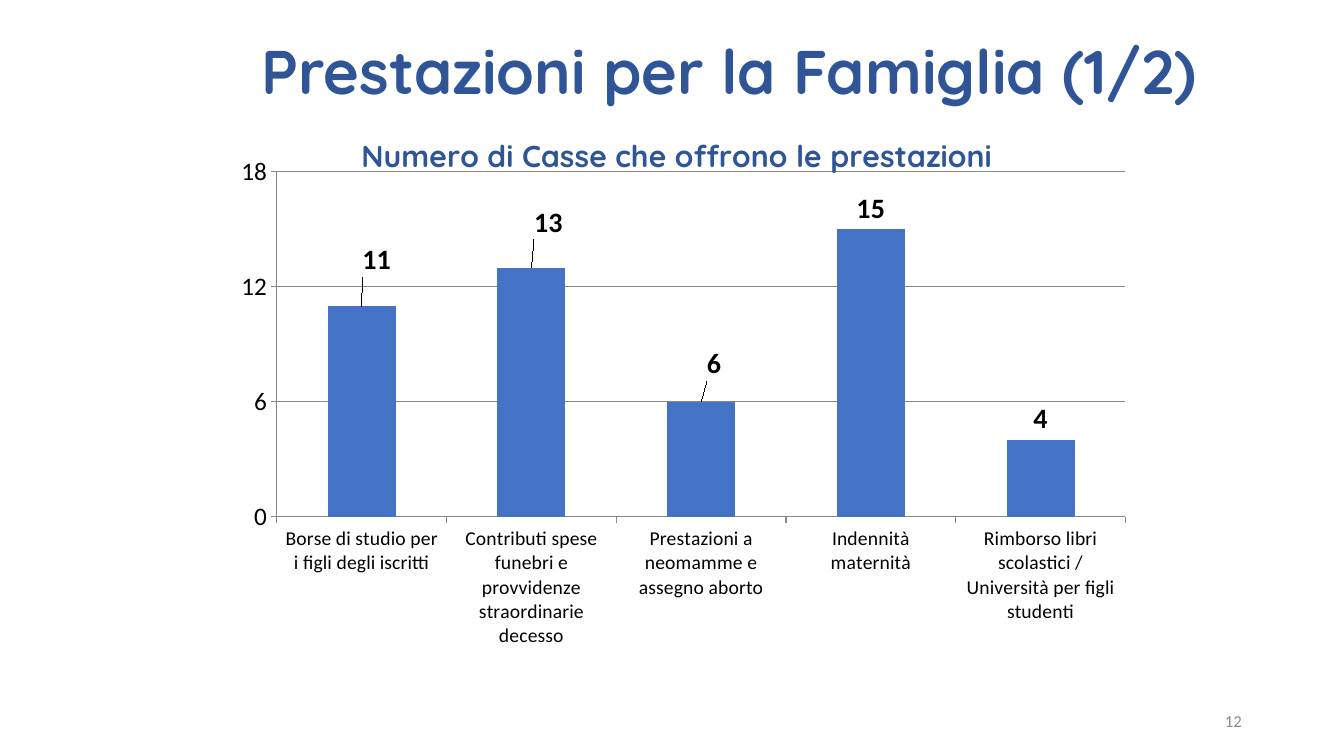
from lxml.etree import SubElement
from pptx import Presentation
from pptx.chart.data import CategoryChartData
from pptx.dml.color import RGBColor
from pptx.enum.chart import XL_CHART_TYPE, XL_LABEL_POSITION, XL_TICK_MARK
from pptx.enum.text import MSO_ANCHOR, MSO_AUTO_SIZE, PP_ALIGN
from pptx.oxml.ns import qn
from pptx.util import Emu, Pt

# Content
TITLE = "Prestazioni per la Famiglia (1/2)"
CHART_TITLE = "Numero di Casse che offrono le prestazioni"
PAGE_NUMBER = "12"
BENEFITS = [
    ("Borse di studio per i figli degli iscritti", 11),
    ("Contributi spese funebri e provvidenze straordinarie decesso", 13),
    ("Prestazioni a neomamme e assegno aborto", 6),
    ("Indennità maternità", 15),
    ("Rimborso libri scolastici / Università per figli studenti", 4),
]

# Geometry in px: left, top, width, height
SLIDE_SIZE = (1344, 756)
TITLE_BOX = (251, 36, 1159, 146)
CHART_BOX = (219, 100, 907, 576)
PLOT_BOX = (58, 72, 849, 345)  # inside the chart
CHART_TITLE_AT = (137, 28)
LABEL_SHIFTS = {0: (15, -25), 1: (17, -24), 2: (13, -17)}

BLUE, BAR, BLACK, GRID, GREY = "2F5597", "4472C4", "000000", "868686", "8C8C8C"
HEADING_FONT, BODY_FONT = "Quicksand", "Calibri"


def px(length):
    return Emu(round(length * 914400 / 100.8))


def style_font(font, name, size, color, bold=False):
    font.name, font.size, font.bold = name, Pt(size), bold
    font.color.rgb = RGBColor.from_string(color)


def write(text_frame, text, align, anchor, *style):
    text_frame.word_wrap = True
    text_frame.auto_size = MSO_AUTO_SIZE.NONE
    text_frame.vertical_anchor = anchor
    paragraph = text_frame.paragraphs[0]
    paragraph.alignment = align
    run = paragraph.add_run()
    run.text = text
    style_font(run.font, *style)
    return paragraph


def set_layout(parent, index, box, inner=False):
    """Place a chart part by fractions of the chart's size."""
    for old in parent.findall(qn("c:layout")):
        parent.remove(old)
    layout = SubElement(parent, qn("c:layout"))
    parent.insert(index, layout)
    manual = SubElement(layout, qn("c:manualLayout"))
    settings = [("layoutTarget", "inner")] if inner else []
    if len(box) == 4 or box == CHART_TITLE_AT:
        settings += [("xMode", "edge"), ("yMode", "edge")]
    for position, (tag, length) in enumerate(zip("xywh", box)):
        settings.append((tag, f"{length / CHART_BOX[2 + position % 2]:.4f}"))
    for tag, value in settings:
        SubElement(manual, qn(f"c:{tag}")).set("val", value)


presentation = Presentation()
presentation.slide_width, presentation.slide_height = map(px, SLIDE_SIZE)
slide = presentation.slides.add_slide(presentation.slide_layouts[5])

# Title
title = slide.shapes.title
title.left, title.top, title.width, title.height = map(px, TITLE_BOX)
paragraph = write(title.text_frame, TITLE, PP_ALIGN.LEFT, MSO_ANCHOR.TOP,
                  HEADING_FONT, 44, BLUE, True)
paragraph.line_spacing = 0.9

# Chart
data = CategoryChartData()
data.categories = [name for name, _ in BENEFITS]
data.add_series(CHART_TITLE, [count for _, count in BENEFITS])
chart = slide.shapes.add_chart(
    XL_CHART_TYPE.COLUMN_CLUSTERED, *map(px, CHART_BOX), data).chart
style_font(chart.font, BODY_FONT, 18, BLACK)
chart.has_legend = False
chart.has_title = True
run = chart.chart_title.text_frame.paragraphs[0].add_run()
run.text = CHART_TITLE
style_font(run.font, HEADING_FONT, 21.6, BLUE, True)
set_layout(chart.element.find(f".//{qn('c:title')}"), 1, CHART_TITLE_AT)
set_layout(chart.element.find(f".//{qn('c:plotArea')}"), 0, PLOT_BOX, True)

# Axes
value_axis, category_axis = chart.value_axis, chart.category_axis
value_axis.minimum_scale, value_axis.maximum_scale = 0, 18
value_axis.major_unit = 6
value_axis.has_major_gridlines = True
for axis, size in ((value_axis, 18), (category_axis, 14)):
    axis.major_tick_mark = XL_TICK_MARK.OUTSIDE
    style_font(axis.tick_labels.font, BODY_FONT, size, BLACK)
for line in (value_axis.format.line, category_axis.format.line,
             value_axis.major_gridlines.format.line):
    line.color.rgb = RGBColor.from_string(GRID)
    line.width = Pt(0.75)

# Bars and their labels
plot = chart.plots[0]
plot.gap_width = 150
plot.vary_by_categories = False
series = plot.series[0]
series.format.fill.solid()
series.format.fill.fore_color.rgb = RGBColor.from_string(BAR)
labels = series.data_labels
labels.show_value = True
labels.position = XL_LABEL_POSITION.OUTSIDE_END
style_font(labels.font, BODY_FONT, 20, BLACK, True)
for point in LABEL_SHIFTS:
    label = series.points[point].data_label
    style_font(label.font, BODY_FONT, 20, BLACK, True)
    label.position = XL_LABEL_POSITION.OUTSIDE_END
for element, shift in zip(chart.element.iter(qn("c:dLbl")), LABEL_SHIFTS.values()):
    set_layout(element, 1, shift)

# Page number
page_box = slide.shapes.add_textbox(*map(px, (950, 701, 302, 40)))
write(page_box.text_frame, PAGE_NUMBER, PP_ALIGN.RIGHT, MSO_ANCHOR.MIDDLE,
      BODY_FONT, 12, GREY)

presentation.save("out.pptx")
